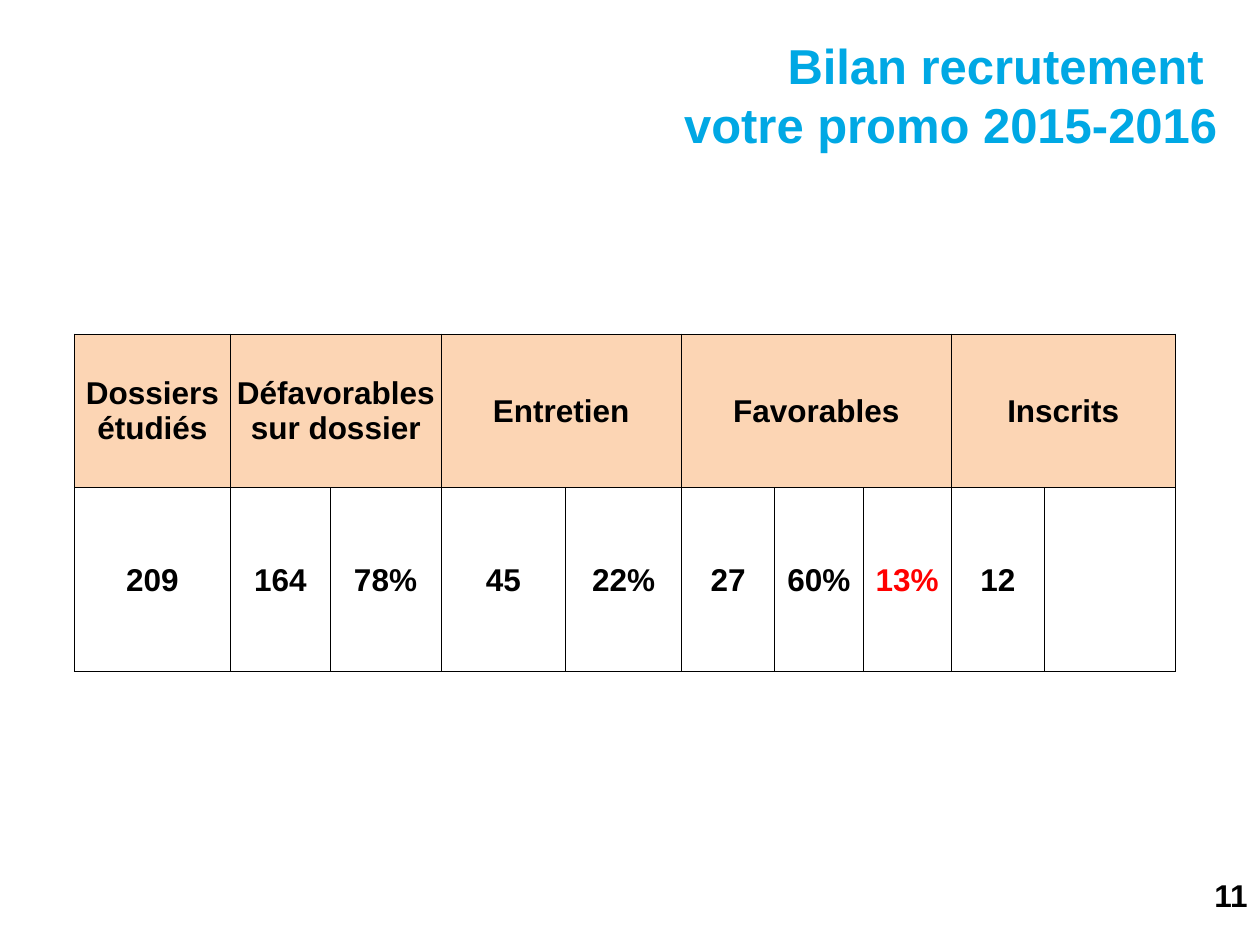
from copy import deepcopy

from pptx import Presentation
from pptx.dml.color import RGBColor
from pptx.enum.text import MSO_ANCHOR, MSO_AUTO_SIZE, PP_ALIGN
from pptx.oxml import parse_xml
from pptx.oxml.ns import nsdecls, qn
from pptx.util import Inches, Pt

BLUE = RGBColor(0x00, 0xA8, 0xE4)
BLACK = RGBColor(0x00, 0x00, 0x00)
RED = RGBColor(0xFF, 0x00, 0x00)
PEACH = RGBColor(0xFC, 0xD5, 0xB4)
MIDDLE = MSO_ANCHOR.MIDDLE
NO_FIT = MSO_AUTO_SIZE.NONE
RIGHT = PP_ALIGN.RIGHT
CENTER = PP_ALIGN.CENTER

COLS = [1.24, 0.79, 0.88, 0.99, 0.92, 0.74, 0.7, 0.7, 0.74, 1.04]
ROWS = [1.22, 1.46]
# Heading and the number of columns it spans
HEADS = [("Dossiers étudiés", 1), ("Défavorables\vsur dossier", 2),
         ("Entretien", 2), ("Favorables", 3), ("Inscrits", 2)]
COUNTS = ["209", "164", "78%", "45", "22%", "27", "60%", "13%", "12", ""]


def write(frame, text, size, color, align):
    frame.text = text
    for para in frame.paragraphs:
        para.alignment = align
        for run in para.runs:
            font = run.font
            font.name, font.size, font.bold = "Arial", Pt(size), True
            font.color.rgb = color
        # Line breaks take the size of the text around them
        for br in para._p.findall(qn("a:br")):
            br.append(deepcopy(para.runs[0]._r.rPr))


def place(shape, box):
    shape.left, shape.top, shape.width, shape.height = map(Inches, box)


def add_title(slide, box):
    title = slide.shapes.title
    place(title, box)
    frame = title.text_frame
    frame.word_wrap, frame.auto_size = True, NO_FIT
    frame.vertical_anchor = MIDDLE
    write(frame, "Bilan recrutement \vvotre promo 2015-2016", 28, BLUE, RIGHT)


def add_number(slide, box):
    frame = slide.shapes.add_textbox(*map(Inches, box)).text_frame
    frame.word_wrap = True
    write(frame, "11", 18, BLACK, RIGHT)


def style_cell(cell, fill):
    cell.vertical_anchor = MIDDLE
    cell.margin_left = cell.margin_right = cell.margin_top = Inches(0.01)
    cell.margin_bottom = 0
    props = cell._tc.get_or_add_tcPr()
    for side in ("lnL", "lnR", "lnT", "lnB"):
        props.append(parse_xml(
            f'<a:{side} {nsdecls("a")} w="{Pt(0.5)}"><a:solidFill>'
            f'<a:srgbClr val="{BLACK}"/></a:solidFill></a:{side}>'))
    if fill is None:
        cell.fill.background()
    else:
        cell.fill.solid()
        cell.fill.fore_color.rgb = fill


def add_results(slide, box):
    table = slide.shapes.add_table(
        len(ROWS), len(COLS), *map(Inches, box)).table
    table.first_row = table.horz_banding = False
    for col, width in zip(table.columns, COLS):
        col.width = Inches(width)
    for row, height, fill in zip(table.rows, ROWS, (PEACH, None)):
        row.height = Inches(height)
        for cell in row.cells:
            style_cell(cell, fill)

    # Headings over their groups of columns
    start = 0
    for text, span in HEADS:
        cell = table.cell(0, start)
        if span > 1:
            cell.merge(table.cell(0, start + span - 1))
        write(cell.text_frame, text, 18, BLACK, CENTER)
        start += span

    # Figures
    for col, text in enumerate(COUNTS):
        color = RED if text == "13%" else BLACK
        write(table.cell(1, col).text_frame, text, 18, color, CENTER)


def main():
    deck = Presentation()
    deck.slide_width, deck.slide_height = Inches(10), Inches(7.5)
    slide = deck.slides.add_slide(deck.slide_layouts[5])
    add_title(slide, (3.11, 0.28, 6.65, 0.94))
    add_number(slide, (9.22, 6.9, 0.78, 0.31))
    add_results(slide, (0.59, 2.65, sum(COLS), sum(ROWS)))
    deck.save("out.pptx")


if __name__ == "__main__":
    main()
